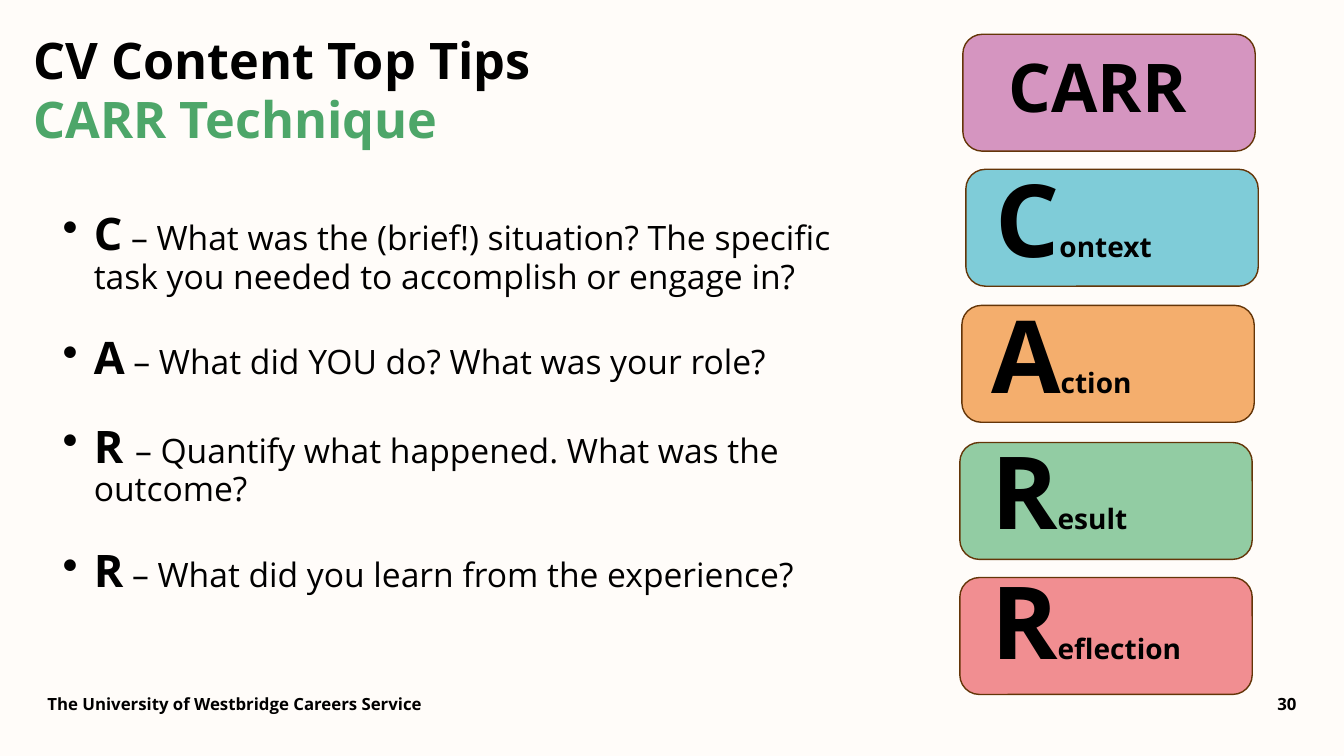
from lxml import etree
from pptx import Presentation
from pptx.dml.color import RGBColor
from pptx.enum.shapes import MSO_SHAPE
from pptx.enum.text import MSO_ANCHOR, MSO_AUTO_SIZE, PP_ALIGN
from pptx.oxml.ns import qn
from pptx.util import Inches, Pt

ROUNDED = MSO_SHAPE.ROUNDED_RECTANGLE
TOP, BOTTOM = MSO_ANCHOR.TOP, MSO_ANCHOR.BOTTOM
LEFT, CENTER, RIGHT = PP_ALIGN.LEFT, PP_ALIGN.CENTER, PP_ALIGN.RIGHT
NO_AUTOFIT = MSO_AUTO_SIZE.NONE

CARDS = [
    (9.55, 0.34, "D595C0", (9.95, 0.54, 2.05, 0.81), [("CARR ", 48)], CENTER),
    (9.58, 1.68, "7FCCD8", (9.87, 1.69, 2.05, 1.21), [("C", 72), ("ontext", 20)], LEFT),
    (9.54, 3.03, "F4AE6D", (9.83, 3.04, 2.05, 1.21), [("A", 72), ("ction", 20)], LEFT),
    (9.52, 4.39, "92CCA3", (9.83, 4.39, 2.05, 1.21), [("R", 72), ("esult", 20)], LEFT),
    (9.52, 5.73, "F18E91", (9.83, 5.68, 2.05, 1.21), [("R", 72), ("eflection", 20)], LEFT),
]
TIPS = [
    ("C", " – What was the (brief!) situation? The specific task you needed to accomplish or engage in?"),
    ("A", " – What did YOU do? What was your role?"),
    ("R ", "– Quantify what happened. What was the outcome?"),
    ("R", " – What did you learn from the experience?"),
]


def color(value):
    return RGBColor.from_string(value)


class CareerSlide:
    font_name = "Open Sans"
    ink = "000000"
    accent = "4DA669"
    outline = "643508"
    background = "FFFCF9"
    line_spacing = 0.9

    def __init__(self, presentation):
        self.slide = presentation.slides.add_slide(presentation.slide_layouts[5])
        fill = self.slide.background.fill
        fill.solid()
        fill.fore_color.rgb = color(self.background)

    def place(self, shape, box):
        shape.left, shape.top, shape.width, shape.height = map(Inches, box)

    def prepare_frame(self, frame, anchor):
        frame.word_wrap = True
        frame.auto_size = NO_AUTOFIT
        frame.vertical_anchor = anchor
        frame.margin_left = frame.margin_right = 0
        frame.margin_top = frame.margin_bottom = 0

    def style_paragraph(self, paragraph, align=LEFT, size=None, bold=None):
        paragraph.alignment = align
        paragraph.line_spacing = self.line_spacing
        font = paragraph.font
        font.name = self.font_name
        font.color.rgb = color(self.ink)
        font.size = size and Pt(size)
        font.bold = bold

    def add_run(self, paragraph, text, size=None, bold=None):
        run = paragraph.add_run()
        run.text = text
        run.font.size = size and Pt(size)
        run.font.bold = bold
        return run

    def add_title(self, box, heading, subheading):
        title = self.slide.shapes.title
        self.place(title, box)
        self.prepare_frame(title.text_frame, TOP)
        paragraph = title.text_frame.paragraphs[0]
        self.style_paragraph(paragraph, size=36, bold=True)
        paragraph.line_spacing = Pt(42)
        self.add_run(paragraph, heading)
        paragraph.add_line_break()
        self.add_run(paragraph, subheading).font.color.rgb = color(self.accent)

    def add_frame(self, box, anchor=TOP):
        frame = self.slide.shapes.add_textbox(*map(Inches, box)).text_frame
        self.prepare_frame(frame, anchor)
        return frame

    def add_label(self, box, parts, align=LEFT, anchor=TOP):
        paragraph = self.add_frame(box, anchor).paragraphs[0]
        shared_size = parts[0][1] if len(parts) == 1 else None
        self.style_paragraph(paragraph, align, shared_size, True)
        for text, size in parts:
            self.add_run(paragraph, text, None if shared_size else size)

    def add_card(self, left, top, fill):
        card = self.slide.shapes.add_shape(
            ROUNDED, Inches(left), Inches(top), Inches(2.9), Inches(1.16))
        card.shadow.inherit = False
        card.fill.solid()
        card.fill.fore_color.rgb = color(fill)
        card.line.color.rgb = color(self.outline)
        card.line.width = Pt(1)

    def add_bullets(self, box, tips):
        frame = self.add_frame(box)
        for index, (letter, text) in enumerate(tips):
            paragraph = frame.paragraphs[0] if index == 0 else frame.add_paragraph()
            properties = paragraph._p.get_or_add_pPr()
            properties.set("marL", str(Inches(0.31)))
            properties.set("indent", str(-Inches(0.31)))
            etree.SubElement(properties, qn("a:buChar")).set("char", "•")
            self.style_paragraph(paragraph)
            paragraph.space_after = Pt(28.5)
            self.add_run(paragraph, letter, 32, True)
            self.add_run(paragraph, text, 24, False)


def main():
    presentation = Presentation()
    presentation.slide_width = Inches(13.33)
    presentation.slide_height = Inches(7.5)
    slide = CareerSlide(presentation)
    slide.add_title((0.33, 0.31, 9.25, 1.25), "CV Content Top Tips", "CARR Technique")
    slide.add_bullets((0.62, 2.1, 7.71, 4.17), TIPS)
    for left, top, fill, label_box, parts, align in CARDS:
        slide.add_card(left, top, fill)
        slide.add_label(label_box, parts, align)
    slide.add_label((0.47, 6.69, 9.25, 0.39),
                    [("The University of Westbridge Careers Service", 12)], anchor=BOTTOM)
    slide.add_label((11.68, 6.69, 1.18, 0.39), [("30", 12)], RIGHT, BOTTOM)
    presentation.save("out.pptx")


if __name__ == "__main__":
    main()
